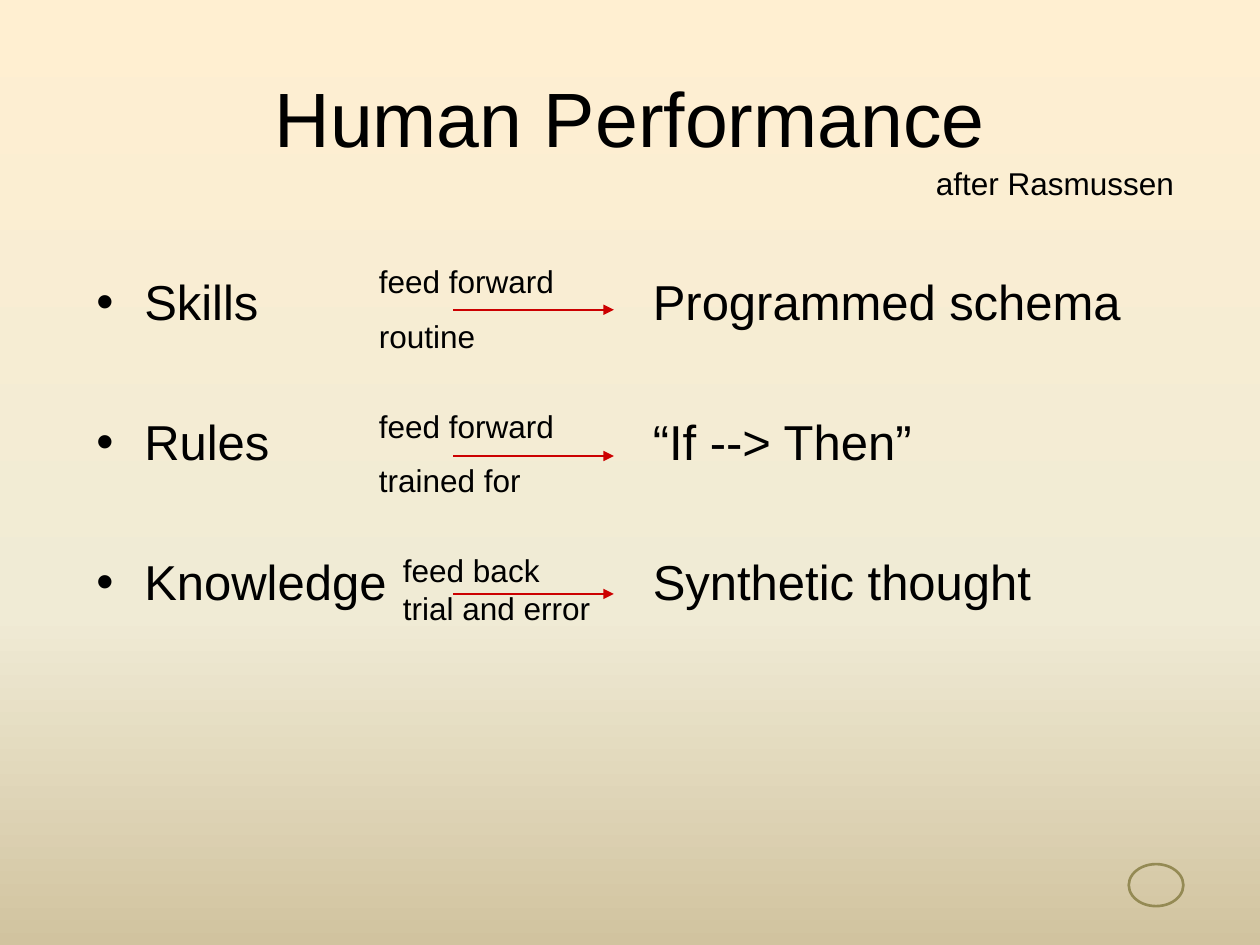
import copy
from dataclasses import dataclass

import lxml.etree
import pptx
import pptx.dml.color
import pptx.enum.dml
import pptx.enum.shapes
import pptx.enum.text
import pptx.oxml
import pptx.oxml.ns
import pptx.util

ALIGN = pptx.enum.text.PP_ALIGN
ANCHOR = pptx.enum.text.MSO_ANCHOR


@dataclass(frozen=True)
class Theme:
    """Colours, font and type sizes of the slide."""
    font: str = "Arial"
    ink: str = "000000"
    arrow: str = "CC0000"
    mark: str = "948A54"
    backdrop: tuple = ((0, "FFEFD1"), (0.65, "F0EBD5"), (1, "D1C39F"))
    title: int = 44
    body: int = 28
    label: int = 18


THEME = Theme()
COLUMNS, ROWS = 120, 90
CELL = pptx.util.Inches(10) // COLUMNS


def grid(*values):
    """Turn grid units into slide lengths."""
    return [round(v * CELL) for v in values]


def rgb(value):
    """Return a colour from its hex form."""
    return pptx.dml.color.RGBColor.from_string(value)


def add_child(parent, tag, **attributes):
    """Append a DrawingML element."""
    lxml.etree.SubElement(parent, pptx.oxml.ns.qn(tag), attributes)


def write(tf, lines, size, align=ALIGN.LEFT, gap=0, wrap=True, anchor=ANCHOR.TOP):
    """Fill a text frame with one paragraph for each line."""
    tf.auto_size = pptx.enum.text.MSO_AUTO_SIZE.NONE
    tf.word_wrap = wrap
    tf.vertical_anchor = anchor
    for i, line in enumerate(lines):
        p = tf.add_paragraph() if i else tf.paragraphs[0]
        p.alignment = align
        p.space_before = pptx.util.Pt(gap if i else 0)
        r = p.add_run()
        r.text = line
        r.font.name = THEME.font
        r.font.size = pptx.util.Pt(size)
        r.font.color.rgb = rgb(THEME.ink)


def add_text(s, box, lines, size, **style):
    """Add a text box and return its text frame."""
    tf = s.shapes.add_textbox(*grid(*box)).text_frame
    write(tf, lines, size, **style)
    return tf


def paint_background(s):
    """Give the slide its vertical three-stop gradient."""
    fill = s.background.fill
    fill.gradient()
    fill.gradient_angle = 270
    stops = s.element.xpath(".//p:bg//a:gsLst")[0]
    stops.append(copy.deepcopy(stops[-1]))
    for stop, (position, colour) in zip(fill.gradient_stops, THEME.backdrop):
        stop.position = position
        stop.color.rgb = rgb(colour)


def add_heading(s, box):
    """Place the title and the credit below its right end."""
    x, y, w, h = box
    title = s.shapes.title
    title.left, title.top, title.width, title.height = grid(*box)
    write(title.text_frame, ["Human Performance"], THEME.title,
          align=ALIGN.CENTER, anchor=ANCHOR.MIDDLE)
    add_text(s, (x + w - 26, y + h - 3.6, 25, 4.8), ["after Rasmussen"],
             THEME.label, align=ALIGN.RIGHT, wrap=False)


def add_column(s, box, lines, bullet=False):
    """Place a column of evenly spaced terms."""
    tf = add_text(s, box, lines, THEME.body, gap=46.4)
    if bullet:
        for p in tf.paragraphs:
            props = p._p.get_or_add_pPr()
            hang = pptx.util.Inches(0.38)
            props.set("marL", str(hang))
            props.set("indent", str(-hang))
            add_child(props, "a:buFont", typeface=THEME.font)
            add_child(props, "a:buChar", char="•")


def add_arrow(s, x1, x2, y):
    """Draw a level arrow pointing right."""
    c = s.shapes.add_connector(pptx.enum.shapes.MSO_CONNECTOR.STRAIGHT,
                               *grid(x1, y, x2, y))
    c.line.color.rgb = rgb(THEME.arrow)
    c.line.width = pptx.util.Pt(1)
    add_child(c.line._get_or_add_ln(), "a:tailEnd", type="triangle")
    add_child(c._element.spPr, "a:effectLst")


def add_links(s, box):
    """Place the arrows and the labels around them."""
    x, y, w, h = box
    links = (
        (["feed forward", "routine"], 0, 9.5, 5.1),
        (["feed forward", "trained for"], 0, 9.5, 5.3),
        (["feed back", "trial and error"], 2.3, 0, 4.7),
    )
    for i, (lines, inset, gap, drop) in enumerate(links):
        top = y + i * h / len(links)
        add_arrow(s, x + w / 3, x + w * 0.95, top + drop)
        add_text(s, (x + inset, top, w - 2 * inset, 10), lines,
                 THEME.label, gap=gap, wrap=False)


def add_mark(s, box):
    """Place a plain oval in the corner."""
    sp = s.shapes.add_shape(pptx.enum.shapes.MSO_SHAPE.OVAL, *grid(*box))
    sp.shadow.inherit = False
    sp.fill.background()
    sp.line.color.rgb = rgb(THEME.mark)
    sp.line.width = pptx.util.Pt(1.5)


def main():
    """Build and save the slide."""
    prs = pptx.Presentation()
    prs.slide_width, prs.slide_height = grid(COLUMNS, ROWS)
    s = prs.slides.add_slide(prs.slide_layouts[5])
    paint_background(s)
    add_mark(s, (107.5, 82.3, 5.2, 4))
    add_heading(s, (6, 3.6, 108, 15))
    add_column(s, (8, 25.3, 51, 39), ["Skills", "Rules", "Knowledge"], bullet=True)
    add_column(s, (61, 25.3, 54, 43),
               ["Programmed schema", "“If --> Then”", "Synthetic thought"])
    add_links(s, (34.9, 24.4, 24.8, 41.2))
    prs.save("out.pptx")


if __name__ == "__main__":
    main()
